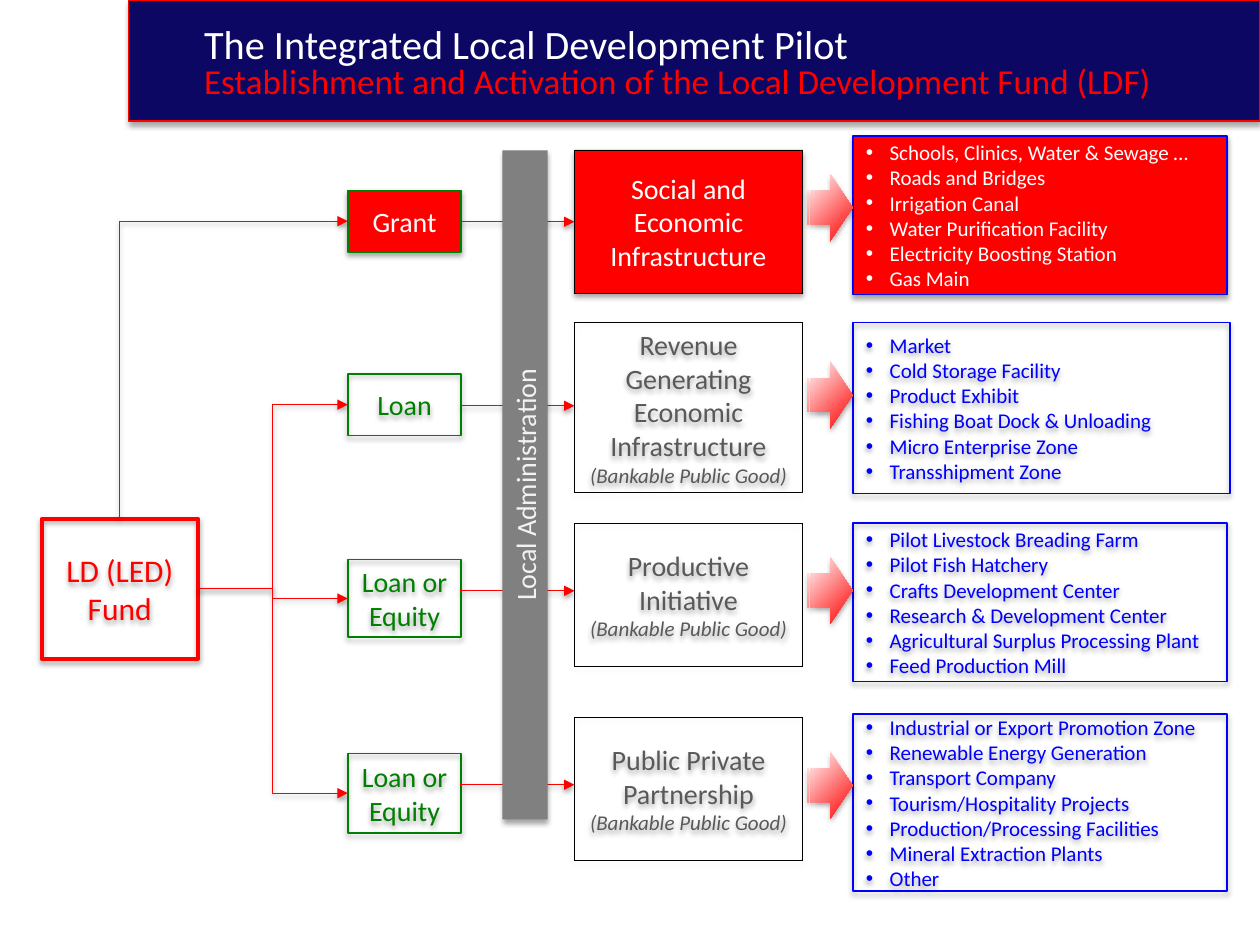
"""Build the Local Development Fund slide: funding types, categories and example projects."""
import dataclasses
import typing

import lxml.etree
import pptx
import pptx.dml.color
import pptx.enum.dml
import pptx.enum.shapes
import pptx.enum.text
import pptx.oxml.ns
import pptx.util

Cm = pptx.util.Cm
Pt = pptx.util.Pt
qn = pptx.oxml.ns.qn
ALIGN = pptx.enum.text.PP_ALIGN
SHAPE = pptx.enum.shapes.MSO_SHAPE
CONNECTOR = pptx.enum.shapes.MSO_CONNECTOR

COLORS = {
    "navy": "0B0763", "red": "FF0000", "white": "FFFFFF", "green": "008000", "blue": "0000FF",
    "black": "000000", "dark": "595959", "gray": "808080", "pale": "F2F2F2",
}
FONT = "Calibri"


class Box(typing.NamedTuple):
    left: float
    top: float
    width: float
    height: float


class Line(typing.NamedTuple):
    text: str
    size: float
    color: str
    italic: bool = False
    spacing: float = 1.0


@dataclasses.dataclass
class Row:
    funding: list[str]
    funding_box: Box
    category: str
    category_box: Box
    projects: list[str]
    projects_box: Box
    arrow_top: float
    link_y: float
    bankable: bool = True


ROWS = [
    Row(["Grant"], Box(7.01, 3.84, 2.29, 1.24),
        "Social and Economic Infrastructure", Box(11.58, 3.02, 4.6, 2.9),
        ["Schools, Clinics, Water & Sewage …", "Roads and Bridges", "Irrigation Canal",
         "Water Purification Facility", "Electricity Boosting Station", "Gas Main"],
        Box(17.2, 2.74, 7.54, 3.2), 3.51, 4.47, bankable=False),
    Row(["Loan"], Box(7.01, 7.54, 2.29, 1.24),
        "Revenue Generating Economic Infrastructure", Box(11.58, 6.5, 4.6, 3.43),
        ["Market", "Cold Storage Facility", "Product Exhibit", "Fishing Boat Dock & Unloading",
         "Micro Enterprise Zone", "Transshipment Zone"],
        Box(17.2, 6.5, 7.59, 3.45), 7.29, 8.18),
    Row(["Loan or", "Equity"], Box(7.01, 11.28, 2.29, 1.57),
        "Productive Initiative", Box(11.58, 10.54, 4.6, 2.9),
        ["Pilot Livestock Breading Farm", "Pilot Fish Hatchery", "Crafts Development Center",
         "Research & Development Center", "Agricultural Surplus Processing Plant",
         "Feed Production Mill"],
        Box(17.2, 10.54, 7.54, 3.2), 11.23, 11.91),
    Row(["Loan or", "Equity"], Box(7.01, 15.19, 2.29, 1.6),
        "Public Private Partnership", Box(11.58, 14.45, 4.6, 2.9),
        ["Industrial or Export Promotion Zone", "Renewable Energy Generation",
         "Transport Company", "Tourism/Hospitality Projects", "Production/Processing Facilities",
         "Mineral Extraction Plants", "Other"],
        Box(17.2, 14.4, 7.54, 3.56), 15.16, 15.82),
]


def rgb(name: str) -> pptx.dml.color.RGBColor:
    return pptx.dml.color.RGBColor.from_string(COLORS[name])


def add_shadow(effects, distance: float, opacity: int) -> None:
    shadow = lxml.etree.SubElement(
        effects, qn("a:outerShdw"), blurRad=str(Pt(3.1)), dist=str(Pt(distance)),
        dir="5400000", rotWithShape="0")
    tint = lxml.etree.SubElement(shadow, qn("a:srgbClr"), val=COLORS["black"])
    lxml.etree.SubElement(tint, qn("a:alpha"), val=str(opacity * 1000))


def style(shape, fill: str | None, outline: str | None = None, width: float = 1) -> None:
    if fill:
        shape.fill.solid()
        shape.fill.fore_color.rgb = rgb(fill)
    else:
        shape.fill.background()
    if outline:
        shape.line.color.rgb = rgb(outline)
        shape.line.width = Pt(width)
    else:
        shape.line.fill.background()
    shape.shadow.inherit = False
    add_shadow(shape.element.spPr.find(qn("a:effectLst")), 1.8, 35)


def write(shape, lines: list[Line], align=ALIGN.CENTER, margin: float = 0,
          indent: float = 0, bullet: bool = False) -> None:
    frame = shape.text_frame
    frame.word_wrap = True
    frame.auto_size = pptx.enum.text.MSO_AUTO_SIZE.NONE
    frame.vertical_anchor = pptx.enum.text.MSO_ANCHOR.MIDDLE
    frame.text = "\n".join(line.text for line in lines)
    for paragraph, line in zip(frame.paragraphs, lines):
        paragraph.alignment = align
        paragraph.line_spacing = line.spacing
        paragraph.space_before = Pt(0)
        properties = paragraph._p.get_or_add_pPr()
        properties.set("marL", str(Cm(margin)))
        properties.set("indent", str(Cm(indent)))
        if bullet:
            lxml.etree.SubElement(properties, qn("a:buFont"), typeface="Arial")
            lxml.etree.SubElement(properties, qn("a:buChar"), char="•")
        font = paragraph.font
        font.name, font.size = FONT, Pt(line.size)
        font.bold, font.italic = False, line.italic
        font.color.rgb = rgb(line.color)


def place(placeholder, box: Box) -> None:
    placeholder.left, placeholder.top, placeholder.width, placeholder.height = map(Cm, box)


def add_box(slide, box: Box, kind=SHAPE.RECTANGLE):
    return slide.shapes.add_shape(kind, *map(Cm, box))


def finish_link(link, arrow_end: str = "a:tailEnd") -> None:
    link.line.color.rgb = rgb("red")
    link.line.width = Pt(0.5)
    properties = link.element.spPr
    lxml.etree.SubElement(properties.find(qn("a:ln")), qn(arrow_end), type="triangle")
    add_shadow(lxml.etree.SubElement(properties, qn("a:effectLst")), 1.6, 38)


def add_elbow(slide, start, start_site: int, end, end_site: int):
    elbow = slide.shapes.add_connector(CONNECTOR.ELBOW, 0, 0, 0, 0)
    elbow.begin_connect(start, start_site)
    elbow.end_connect(end, end_site)
    return elbow


def add_block_arrow(slide, top: float) -> None:
    arrow = add_box(slide, Box(16.28, top, 0.91, 1.35), SHAPE.STRIPED_RIGHT_ARROW)
    style(arrow, None)
    arrow.fill.gradient()
    for stop, color, position in zip(arrow.fill.gradient_stops, ("red", "white"), (0, 1)):
        stop.color.rgb = rgb(color)
        stop.position = position
    gradient = arrow.element.spPr.find(qn("a:gradFill"))
    gradient.remove(gradient.find(qn("a:lin")))
    focus = lxml.etree.SubElement(gradient, qn("a:path"), path="circle")
    lxml.etree.SubElement(focus, qn("a:fillToRect"), l="100000", t="100000")


def add_row(slide, row: Row, projects, first: bool):
    category = add_box(slide, row.category_box)
    style(category, "red" if first else None, "black", 0.25)
    category.line.dash_style = pptx.enum.dml.MSO_LINE.ROUND_DOT
    lines = [Line(row.category, 16, "white" if first else "dark")]
    if row.bankable:
        lines.append(Line("(Bankable Public Good)", 12, "dark", italic=True))
    write(category, lines)

    funding = add_box(slide, row.funding_box)
    style(funding, "red" if first else None, "green")
    write(funding, [Line(text, 16, "white" if first else "green") for text in row.funding])

    place(projects, row.projects_box)
    style(projects, "red" if first else None, "blue")
    write(projects, [Line(text, 12, "white" if first else "blue") for text in row.projects],
          ALIGN.LEFT, 0.48, -0.48, bullet=True)

    add_block_arrow(slide, row.arrow_top)
    finish_link(slide.shapes.add_connector(
        CONNECTOR.STRAIGHT, Cm(9.28), Cm(row.link_y), Cm(11.58), Cm(row.link_y)))
    return funding


def main() -> None:
    deck = pptx.Presentation()
    deck.slide_width, deck.slide_height = Cm(25.4), Cm(19.05)
    slide = deck.slides.add_slide(deck.slide_layouts.get_by_name("Comparison"))
    title, *project_lists = slide.placeholders

    place(title, Box(2.59, 0, 22.81, 2.44))
    style(title, "navy", "red", 0.75)
    write(title, [
        Line("The Integrated Local Development Pilot", 23, "white"),
        Line("Establishment and Activation of the Local Development Fund (LDF)", 20, "red",
             spacing=0.8),
    ], ALIGN.LEFT, margin=1.27)

    fund = add_box(slide, Box(0.84, 10.46, 3.15, 2.82))
    style(fund, None, "red", 2.25)
    write(fund, [Line("LD (LED)", 18, "red"), Line("Fund", 18, "red")])

    grant, *loans = [add_row(slide, row, projects, row is ROWS[0])
                     for row, projects in zip(ROWS, project_lists)]
    grant_elbow = add_elbow(slide, grant, 1, fund, 0)
    grant_elbow.element.spPr.find(qn("a:prstGeom")).set("prst", "bentConnector2")
    finish_link(grant_elbow, "a:headEnd")
    for loan in loans:
        finish_link(add_elbow(slide, fund, 3, loan, 1))

    administration = add_box(slide, Box(3.84, 9.32, 13.49, 0.91))
    administration.rotation = 270
    style(administration, "gray")
    write(administration, [Line("Local Administration", 16, "pale")])

    deck.save("out.pptx")


if __name__ == "__main__":
    main()
